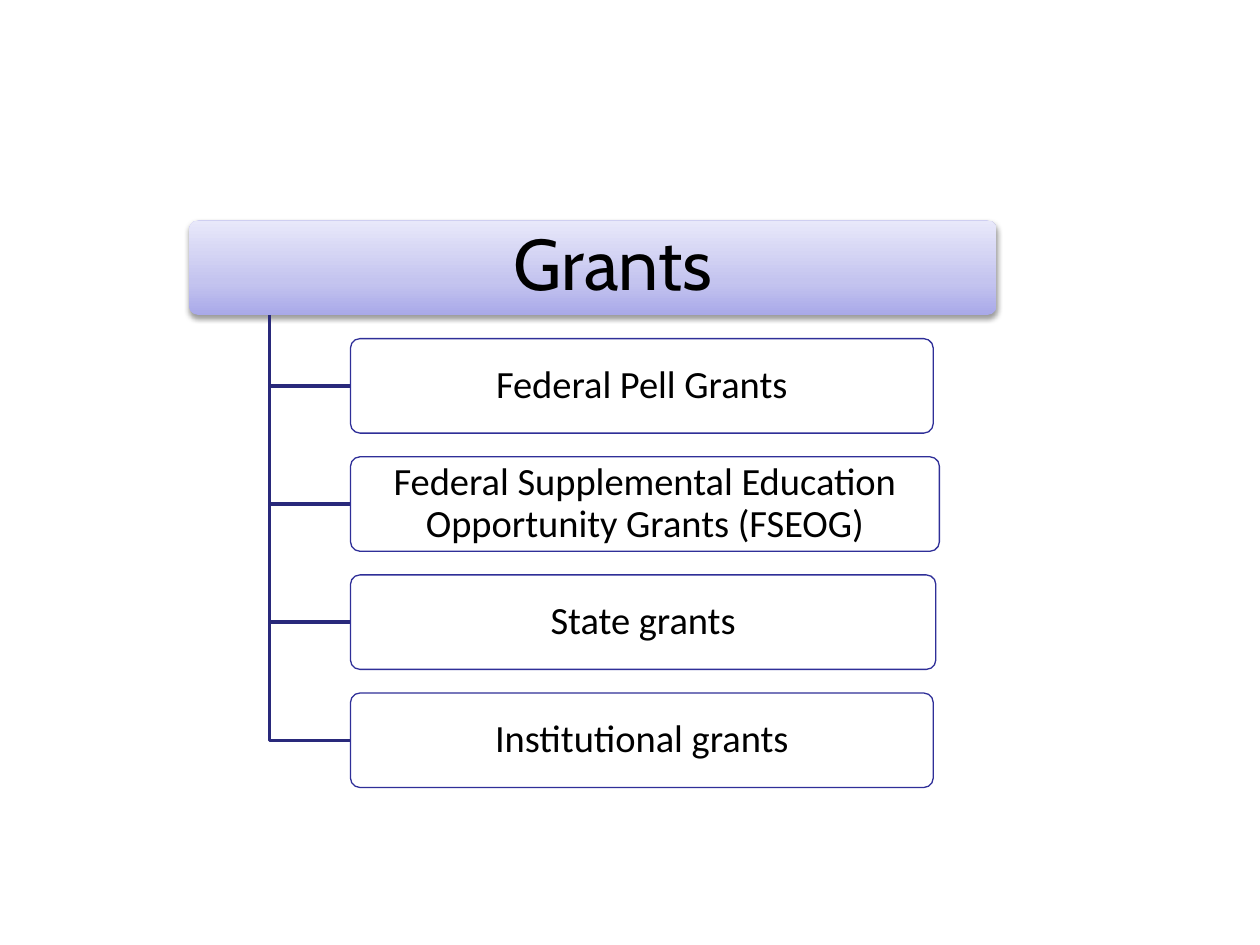
from copy import deepcopy

from lxml.etree import SubElement
from pptx import Presentation
from pptx.dml.color import RGBColor
from pptx.enum.shapes import MSO_SHAPE
from pptx.enum.text import MSO_ANCHOR, PP_ALIGN
from pptx.oxml.ns import qn
from pptx.util import Pt

HEADING = "Grants"
GRANTS = [
    ("Federal Pell Grants", 333),
    ("Federal Supplemental Education Opportunity Grants (FSEOG)", 336.5),
    ("State grants", 334.5),
    ("Institutional grants", 333),
]
GRADIENT = [(0, "A9A9E9"), (0.35, "C4C4EF"), (1, "E8E8FA")]
LEFT, TOP, WIDTH, HEIGHT = 108, 126, 461.5, 54
TRUNK_X, ITEM_X = 154.1, 200.3
STEP = HEIGHT * 1.25


def color(value):
    return RGBColor.from_string(value)


def add_box(s, text, x, y, w, font, size, insets):
    sp = s.shapes.add_shape(MSO_SHAPE.ROUNDED_RECTANGLE, Pt(x), Pt(y), Pt(w), Pt(HEIGHT))
    sp.adjustments[0] = 0.1
    sp.shadow.inherit = False
    tf = sp.text_frame
    tf.word_wrap = True
    tf.vertical_anchor = MSO_ANCHOR.MIDDLE
    tf.margin_left, tf.margin_top, tf.margin_right, tf.margin_bottom = map(Pt, insets)
    p = tf.paragraphs[0]
    p.text = text
    p.alignment = PP_ALIGN.CENTER
    p.line_spacing = 0.9
    p.font.name = font
    p.font.size = Pt(size)
    p.font.color.rgb = color("000000")
    return sp


def add_heading(s):
    sp = add_box(s, HEADING, LEFT, TOP, WIDTH, "Cabin", 41, (31, 6, 8, 6))
    sp.line.fill.background()
    sp.fill.gradient()
    sp.fill.gradient_angle = 90
    spPr = sp._element.spPr
    stops = spPr.find(qn("a:gradFill")).find(qn("a:gsLst"))
    stops.append(deepcopy(stops[0]))
    for stop, (position, value) in zip(sp.fill.gradient_stops, GRADIENT):
        stop.position = position
        stop.color.rgb = color(value)
    shadow = SubElement(spPr.find(qn("a:effectLst")), qn("a:outerShdw"),
                        blurRad=str(Pt(3.1)), dist=str(Pt(1.6)), dir="5400000", rotWithShape="0")
    black = SubElement(shadow, qn("a:srgbClr"), val="000000")
    SubElement(black, qn("a:alpha"), val="38000")


def add_branch(s, y):
    builder = s.shapes.build_freeform(Pt(TRUNK_X), Pt(TOP + HEIGHT))
    builder.add_line_segments([(Pt(TRUNK_X), Pt(y)), (Pt(ITEM_X), Pt(y))], close=False)
    sp = builder.convert_to_shape()
    sp.shadow.inherit = False
    sp.fill.background()
    sp.line.color.rgb = color("29297B")
    sp.line.width = Pt(2)


def add_item(s, text, y, w):
    sp = add_box(s, text, ITEM_X, y, w, "Calibri", 22, (5, 3.5, 5, 3.5))
    sp.fill.solid()
    sp.fill.fore_color.rgb = color("FFFFFF")
    sp.line.color.rgb = color("2F2F98")
    sp.line.width = Pt(0.75)


def main():
    prs = Presentation()
    prs.slide_width, prs.slide_height = Pt(720), Pt(540)
    s = prs.slides.add_slide(prs.slide_layouts[6])
    add_heading(s)
    for i, (text, w) in enumerate(GRANTS, 1):
        y = TOP + i * STEP
        add_branch(s, y + HEIGHT / 2)
        add_item(s, text, y, w)
    prs.save("out.pptx")


if __name__ == "__main__":
    main()
